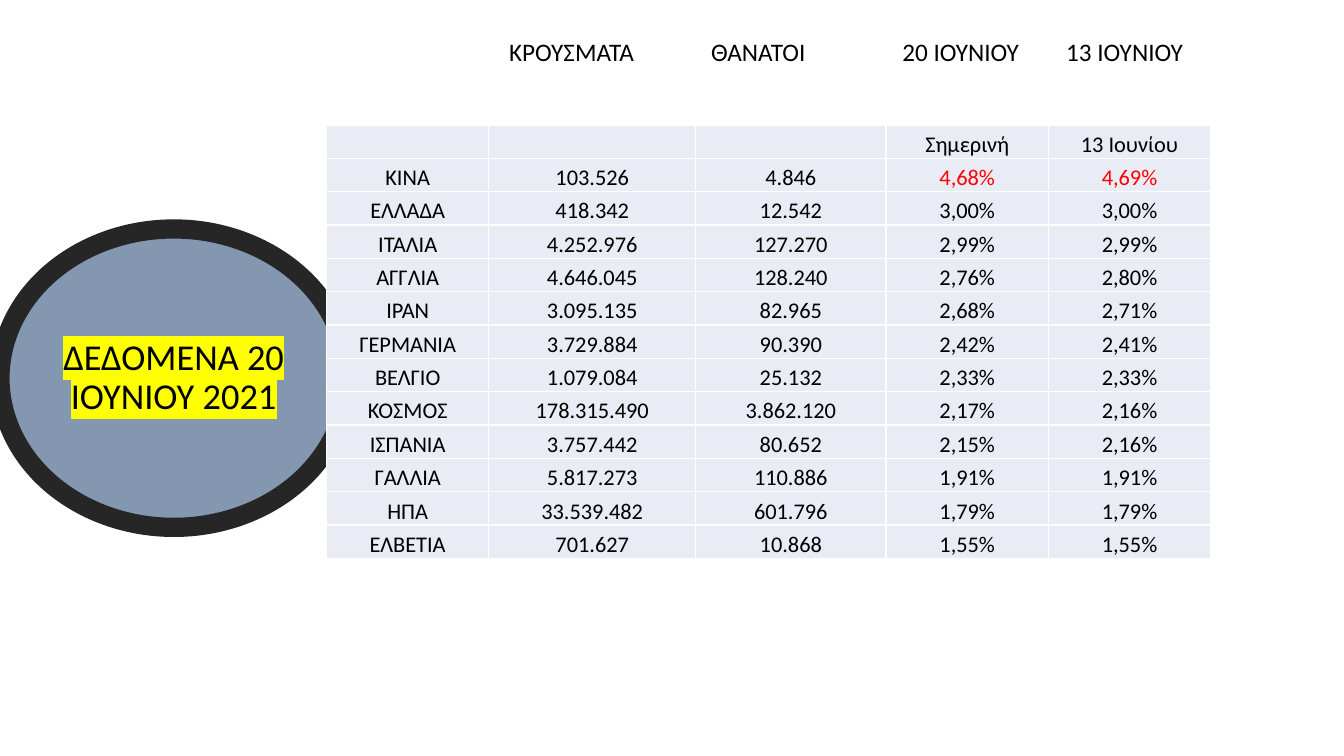
from lxml.etree import SubElement
from pptx import Presentation
from pptx.dml.color import RGBColor
from pptx.enum.shapes import MSO_SHAPE
from pptx.enum.text import MSO_ANCHOR, MSO_AUTO_SIZE, PP_ALIGN
from pptx.oxml import parse_xml
from pptx.oxml.ns import nsdecls, qn
from pptx.util import Cm, Pt


def color(value):
    return RGBColor.from_string(value)


def format_text(paragraph, size, font_color="000000"):
    for run in paragraph.runs:
        run.font.name = "Calibri"
        run.font.size = Pt(size)
        run.font.color.rgb = color(font_color)


presentation = Presentation()
presentation.slide_width = Cm(33.87)
presentation.slide_height = Cm(19.05)
slide = presentation.slides.add_slide(presentation.slide_layouts[6])

ellipse = slide.shapes.add_shape(MSO_SHAPE.OVAL, Cm(0), Cm(5.77), Cm(8.76), Cm(7.52))
ellipse.shadow.inherit = False
ellipse.fill.solid()
ellipse.fill.fore_color.rgb = color("8497B0")
ellipse.line.color.rgb = color("262626")
ellipse.line.width = Pt(13.75)
ellipse.text_frame.text = "ΔΕΔΟΜΕΝΑ 20 ΙΟΥΝΙΟΥ 2021"
ellipse.text_frame.word_wrap = True
ellipse.text_frame.vertical_anchor = MSO_ANCHOR.MIDDLE
paragraph = ellipse.text_frame.paragraphs[0]
paragraph.alignment = PP_ALIGN.CENTER
paragraph.line_spacing = 0.9
paragraph.space_after = Pt(6)
format_text(paragraph, 26)
highlight = parse_xml(f'<a:highlight {nsdecls("a")}><a:srgbClr val="FFFF00"/></a:highlight>')
paragraph.runs[0].font._element.find(qn("a:solidFill")).addnext(highlight)

headings = [
    ("ΚΡΟΥΣΜΑΤΑ", 11.71, 5.21, 1.12),
    ("ΘΑΝΑΤΟΙ", 16.23, 5.21, 1.69),
    ("20 ΙΟΥΝΙΟΥ", 21.77, 5.21, 0.97),
    ("13 ΙΟΥΝΙΟΥ", 25.32, 6.63, 1.55),
]
for text, left, width, indent in headings:
    heading = slide.shapes.add_textbox(Cm(left), Cm(0.79), Cm(width), Cm(1.02))
    text_frame = heading.text_frame
    text_frame.text = text
    text_frame.word_wrap = True
    text_frame.auto_size = MSO_AUTO_SIZE.SHAPE_TO_FIT_TEXT
    text_frame.margin_left = Cm(indent)
    text_frame.paragraphs[0].space_after = Pt(6)
    format_text(text_frame.paragraphs[0], 18)

rows = [
    ("", "", "", "Σημερινή", "13 Ιουνίου"),
    ("ΚΙΝΑ", "103.526", "4.846", "4,68%", "4,69%"),
    ("ΕΛΛΑΔΑ", "418.342", "12.542", "3,00%", "3,00%"),
    ("ΙΤΑΛΙΑ", "4.252.976", "127.270", "2,99%", "2,99%"),
    ("ΑΓΓΛΙΑ", "4.646.045", "128.240", "2,76%", "2,80%"),
    ("ΙΡΑΝ", "3.095.135", "82.965", "2,68%", "2,71%"),
    ("ΓΕΡΜΑΝΙΑ", "3.729.884", "90.390", "2,42%", "2,41%"),
    ("ΒΕΛΓΙΟ", "1.079.084", "25.132", "2,33%", "2,33%"),
    ("ΚΟΣΜΟΣ", "178.315.490", "3.862.120", "2,17%", "2,16%"),
    ("ΙΣΠΑΝΙΑ", "3.757.442", "80.652", "2,15%", "2,16%"),
    ("ΓΑΛΛΙΑ", "5.817.273", "110.886", "1,91%", "1,91%"),
    ("ΗΠΑ", "33.539.482", "601.796", "1,79%", "1,79%"),
    ("ΕΛΒΕΤΙΑ", "701.627", "10.868", "1,55%", "1,55%"),
]
column_widths = [4.09, 5.21, 4.8, 4.09, 4.09]
row_height = 0.84
table = slide.shapes.add_table(
    len(rows), len(column_widths), Cm(8.23), Cm(3.15),
    Cm(sum(column_widths)), Cm(row_height * len(rows)),
).table
table.first_row = False
table.horz_banding = False
for column, width in zip(table.columns, column_widths):
    column.width = Cm(width)

for row_index, values in enumerate(rows):
    table.rows[row_index].height = Cm(row_height)
    for column_index, value in enumerate(values):
        cell = table.cell(row_index, column_index)
        cell.text = value
        cell.vertical_anchor = MSO_ANCHOR.BOTTOM
        cell.margin_left = cell.margin_right = cell.margin_top = Cm(0.02)
        cell.margin_bottom = Cm(0)
        paragraph = cell.text_frame.paragraphs[0]
        paragraph.alignment = PP_ALIGN.CENTER
        is_highest_rate = row_index == 1 and column_index >= 3
        format_text(paragraph, 16, "FF0000" if is_highest_rate else "000000")
        properties = cell._tc.get_or_add_tcPr()
        for side in ("lnL", "lnR", "lnT", "lnB"):
            border = SubElement(properties, qn(f"a:{side}"), w=str(Pt(1)))
            border_fill = SubElement(border, qn("a:solidFill"))
            SubElement(border_fill, qn("a:srgbClr"), val="FFFFFF")
        cell.fill.solid()
        cell.fill.fore_color.rgb = color("E9EBF5")

presentation.save("out.pptx")
